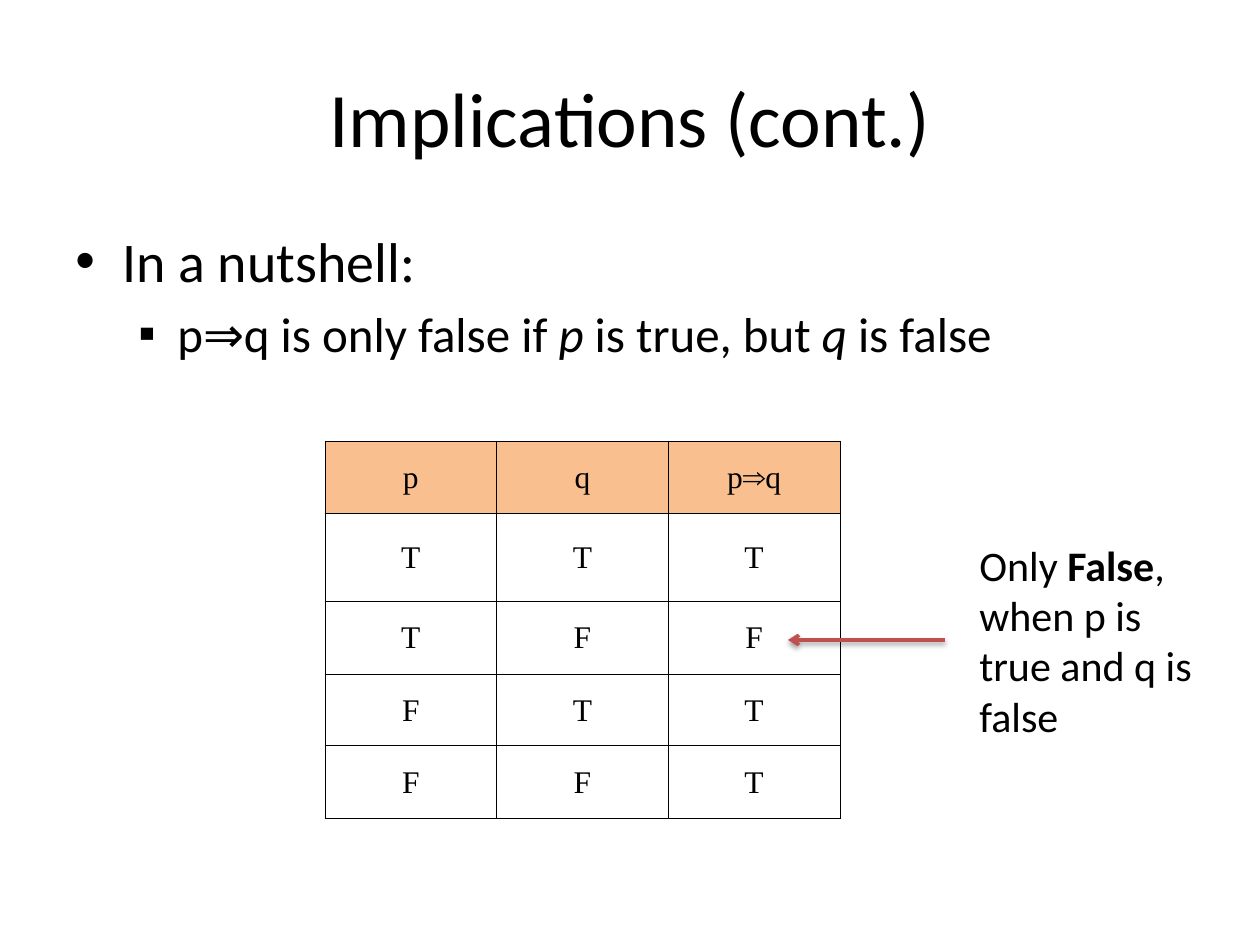
from lxml.etree import SubElement
from pptx import Presentation
from pptx.dml.color import RGBColor
from pptx.enum.shapes import MSO_CONNECTOR as Connector
from pptx.enum.text import MSO_ANCHOR as Anchor, PP_ALIGN as Align
from pptx.oxml import parse_xml
from pptx.oxml.ns import nsdecls, qn
from pptx.util import Pt

PX = 914400 / 126
BLACK = RGBColor(0x00, 0x00, 0x00)
HEADER_ORANGE = RGBColor(0xFA, 0xBF, 0x8F)
ARROW_RED = RGBColor(0xC0, 0x50, 0x4D)
SANS, SERIF = "Calibri", "Times New Roman"


def px(length):
    return round(length * PX)


def add_runs(paragraph, runs, size, font=SANS):
    """Each run is (text, style), where style is "", "b" or "i"."""
    for text, style in runs:
        run = paragraph.add_run()
        run.text = text
        run.font.name = font
        run.font.size = Pt(size)
        run.font.color.rgb = BLACK
        run.font.bold = style == "b"
        run.font.italic = style == "i"


def add_frame(slide, box, anchor=Anchor.TOP):
    frame = slide.shapes.add_textbox(*map(px, box)).text_frame
    frame.word_wrap = True
    frame.vertical_anchor = anchor
    return frame


def add_title(slide, box):
    heading = add_frame(slide, box, Anchor.MIDDLE).paragraphs[0]
    heading.alignment = Align.CENTER
    add_runs(heading, [("Implications (cont.)", "")], 44)


def add_bullet(paragraph, mark, left, hanging):
    props = paragraph._p.get_or_add_pPr()
    props.set("marL", str(px(left)))
    props.set("indent", str(-px(hanging)))
    SubElement(props, qn("a:buFont"), typeface="Arial")
    SubElement(props, qn("a:buChar"), char=mark)


def add_body(slide, box):
    frame = add_frame(slide, box)
    summary = frame.paragraphs[0]
    add_bullet(summary, "•", 47, 47)
    add_runs(summary, [("In a nutshell:", "")], 32)

    rule = frame.add_paragraph()
    add_bullet(rule, "▪", 102, 39)
    rule.level = 1
    rule.space_before = Pt(5.6)
    add_runs(rule, [("p⇒q is only false if ", ""), ("p", "i"),
                    (" is true, but ", ""), ("q", "i"), (" is false", "")], 28)


def add_borders(cell):
    props = cell._tc.get_or_add_tcPr()
    for side in ("lnL", "lnR", "lnT", "lnB"):
        props.append(parse_xml(
            f'<a:{side} {nsdecls("a")} w="{Pt(0.5)}"><a:solidFill>'
            f'<a:srgbClr val="{BLACK}"/></a:solidFill></a:{side}>'))


def add_truth_table(slide, box):
    rows = [("p", "q", "p⇒q"), "TTT", "TFF", "FTT", "FFT"]
    heights = [72, 88, 73, 72, 73]
    left, top, width = box
    table = slide.shapes.add_table(
        len(rows), 3, px(left), px(top), px(width), px(sum(heights))).table
    for column in table.columns:
        column.width = px(width / 3)
    for r, (values, height) in enumerate(zip(rows, heights)):
        table.rows[r].height = px(height)
        for c, value in enumerate(values):
            cell = table.cell(r, c)
            cell.margin_left = cell.margin_right = cell.margin_top = px(1)
            cell.margin_bottom = 0
            cell.vertical_anchor = Anchor.MIDDLE
            add_borders(cell)
            if r == 0:
                cell.fill.solid()
                cell.fill.fore_color.rgb = HEADER_ORANGE
            else:
                cell.fill.background()
            entry = cell.text_frame.paragraphs[0]
            entry.alignment = Align.CENTER
            add_runs(entry, [(value, "")], 18, SERIF)


def add_callout(slide, box):
    left, top, width, height = box
    # Arrow from the note to the only false result
    arrow = slide.shapes.add_connector(
        Connector.STRAIGHT, px(left + 157), px(top + 107), px(left), px(top + 107))
    arrow.line.color.rgb = ARROW_RED
    arrow.line.width = Pt(2)
    SubElement(arrow.line._get_or_add_ln(), qn("a:tailEnd"), type="arrow")
    arrow._element.spPr.append(parse_xml(
        f'<a:effectLst {nsdecls("a")}><a:outerShdw blurRad="{Pt(3.1)}" '
        f'dist="{Pt(1.6)}" dir="5400000" rotWithShape="0"><a:srgbClr val="{BLACK}">'
        '<a:alpha val="38000"/></a:srgbClr></a:outerShdw></a:effectLst>'))

    # Note
    note = add_frame(slide, (left + 179, top, width - 179, height)).paragraphs[0]
    add_runs(note, [("Only ", ""), ("False", "b"),
                    (", when p is true and q is false", "")], 24)


def main():
    deck = Presentation()
    deck.slide_width, deck.slide_height = px(1260), px(945)
    slide = deck.slides.add_slide(deck.slide_layouts[6])
    add_title(slide, (63, 38, 1134, 158))
    add_body(slide, (63, 220, 1134, 624))
    add_truth_table(slide, (325, 441, 515))
    add_callout(slide, (788, 533, 421, 217))
    deck.save("out.pptx")


if __name__ == "__main__":
    main()
